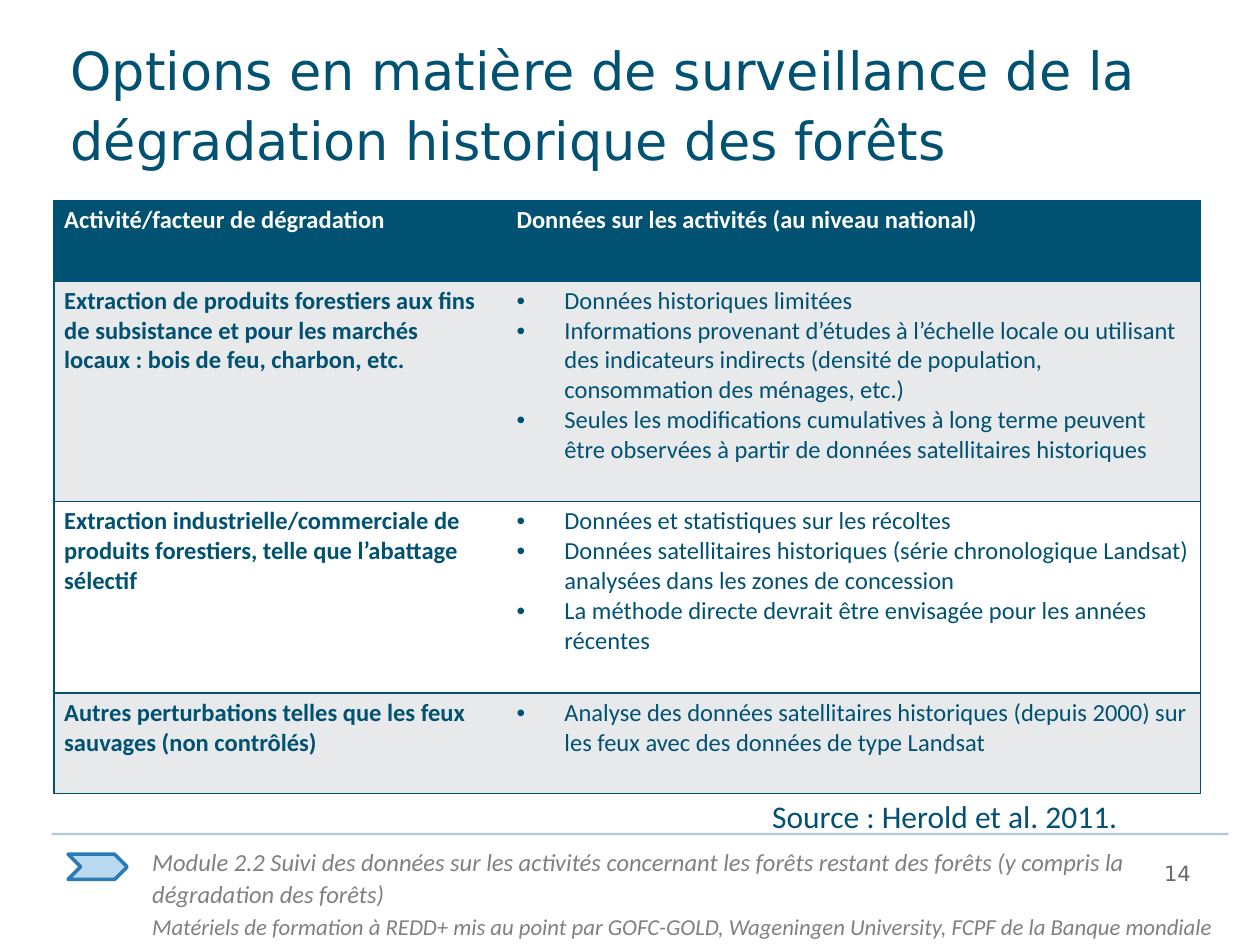
from dataclasses import dataclass

from lxml.etree import SubElement
from pptx import Presentation
from pptx.dml.color import RGBColor
from pptx.enum.shapes import MSO_CONNECTOR, MSO_SHAPE
from pptx.enum.text import MSO_ANCHOR, MSO_AUTO_SIZE, PP_ALIGN
from pptx.oxml import parse_xml
from pptx.oxml.ns import nsdecls, qn
from pptx.util import Inches, Pt

TEAL, GREY, WHITE, BAND = "005172", "808080", "FFFFFF", "E7E9EB"
BODY_FONT, TITLE_FONT = "Calibri", "DejaVu Sans"


@dataclass
class Line:
    text: str
    size: float
    color: str = TEAL
    font: str = BODY_FONT
    bold: bool = False
    italic: bool = False
    spacing: float | None = None
    bullet: bool = False


@dataclass
class Activity:
    name: str
    data: list[str]
    height: float


ACTIVITIES = [
    Activity(
        "Extraction de produits forestiers aux fins de subsistance et pour les marchés locaux : "
        "bois de feu, charbon, etc.",
        ["Données historiques limitées",
         "Informations provenant d’études à l’échelle locale ou utilisant des indicateurs indirects "
         "(densité de population, consommation des ménages, etc.)",
         "Seules les modifications cumulatives à long terme peuvent être observées à partir de "
         "données satellitaires historiques"],
        1.75),
    Activity(
        "Extraction industrielle/commerciale de produits forestiers, telle que l’abattage sélectif",
        ["Données et statistiques sur les récoltes",
         "Données satellitaires historiques (série chronologique Landsat) analysées dans les zones "
         "de concession",
         "La méthode directe devrait être envisagée pour les années récentes"],
        1.52),
    Activity(
        "Autres perturbations telles que les feux sauvages (non contrôlés)",
        ["Analyse des données satellitaires historiques (depuis 2000) sur les feux avec des données "
         "de type Landsat"],
        0.8),
]


def rgb(color: str) -> RGBColor:
    return RGBColor.from_string(color)


def write(text_frame, lines: list[Line]) -> None:
    for index, line in enumerate(lines):
        paragraph = text_frame.paragraphs[0] if index == 0 else text_frame.add_paragraph()
        paragraph.text = line.text
        paragraph.alignment = PP_ALIGN.LEFT
        if line.spacing:
            paragraph.line_spacing = Pt(line.spacing)
        if line.bullet:
            properties = paragraph._p.get_or_add_pPr()
            properties.set("marL", str(Inches(0.38)))
            properties.set("indent", str(-Inches(0.38)))
            SubElement(properties, qn("a:buFont"), typeface="Arial")
            SubElement(properties, qn("a:buChar"), char="•")
        font = paragraph.font
        font.name, font.size = line.font, Pt(line.size)
        font.bold, font.italic = line.bold, line.italic
        font.color.rgb = rgb(line.color)


def add_text(slide, left: float, top: float, width: float, height: float, lines: list[Line]) -> None:
    box = slide.shapes.add_textbox(Inches(left), Inches(top), Inches(width), Inches(height))
    box.text_frame.word_wrap = True
    write(box.text_frame, lines)


def set_borders(cell, outer_side: str) -> None:
    """Rule the top, bottom and outer side; leave the inner side open."""
    properties = cell._tc.get_or_add_tcPr()
    for index, side in enumerate("LRTB"):
        if side in outer_side + "TB":
            paint = f'<a:solidFill><a:srgbClr val="{TEAL}"/></a:solidFill>'
        else:
            paint = "<a:noFill/>"
        border = parse_xml(f'<a:ln{side} {nsdecls("a")} w="{Pt(1)}">{paint}</a:ln{side}>')
        properties.insert(index, border)


def fill_cell(cell, fill: str, outer_side: str, lines: list[Line]) -> None:
    cell.margin_left = cell.margin_right = Inches(0.08)
    cell.margin_top = cell.margin_bottom = Inches(0.04)
    cell.fill.solid()
    cell.fill.fore_color.rgb = rgb(fill)
    set_borders(cell, outer_side)
    write(cell.text_frame, lines)


def add_activity_table(slide) -> None:
    heights = [0.64] + [activity.height for activity in ACTIVITIES]
    table = slide.shapes.add_table(len(heights), 2, Inches(0.43), Inches(1.59),
                                   Inches(9.1), Inches(sum(heights))).table
    for column, width in zip(table.columns, (3.59, 5.51)):
        column.width = Inches(width)
    for row, height in zip(table.rows, heights):
        row.height = Inches(height)

    headings = ("Activité/facteur de dégradation", "Données sur les activités (au niveau national)")
    for column, (heading, side) in enumerate(zip(headings, "LR")):
        fill_cell(table.cell(0, column), TEAL, side, [Line(heading, 14, WHITE, bold=True)])
    for row, activity in enumerate(ACTIVITIES, start=1):
        fill = BAND if row % 2 else WHITE
        fill_cell(table.cell(row, 0), fill, "L", [Line(activity.name, 14, bold=True)])
        fill_cell(table.cell(row, 1), fill, "R",
                  [Line(text, 14, bullet=True) for text in activity.data])


def add_footer(slide) -> None:
    add_text(slide, 1.11, 6.66, 8.64, 0.86, [
        Line("Module 2.2 Suivi des données sur les activités concernant les forêts restant des "
             "forêts (y compris la dégradation des forêts)", 14, GREY, italic=True, spacing=18),
        Line("Matériels de formation à REDD+ mis au point par GOFC-GOLD, Wageningen University, "
             "FCPF de la Banque mondiale", 13, GREY, italic=True, spacing=18),
    ])
    chevron = slide.shapes.add_shape(MSO_SHAPE.CHEVRON, Inches(0.54), Inches(6.78),
                                     Inches(0.47), Inches(0.2))
    chevron.shadow.inherit = False
    chevron.fill.solid()
    chevron.fill.fore_color.rgb = rgb("B9D9EF")
    chevron.line.color.rgb = rgb("297AB5")
    chevron.line.width = Pt(2)
    add_text(slide, 9.14, 6.73, 0.61, 0.33, [Line("14", 12, "706762", TITLE_FONT, spacing=18)])

    # Translucent rule above the footer
    rule = slide.shapes.add_connector(MSO_CONNECTOR.STRAIGHT, Inches(0.41), Inches(6.62),
                                      Inches(9.75), Inches(6.62))
    rule.line.color.rgb = rgb(TEAL)
    rule.line.width = Pt(1.25)
    color = rule.line._ln.find(".//" + qn("a:srgbClr"))
    SubElement(color, qn("a:alpha"), val="30000")
    SubElement(rule._element.spPr, qn("a:effectLst"))


def format_title(title) -> None:
    title.left, title.top = Inches(0.54), Inches(0.25)
    title.width, title.height = Inches(9.23), Inches(1.2)
    frame = title.text_frame
    frame.margin_left, frame.margin_top = Inches(0.02), 0
    frame.margin_right, frame.margin_bottom = Inches(0.1), Inches(0.35)
    frame.word_wrap = True
    frame.auto_size = MSO_AUTO_SIZE.NONE
    frame.vertical_anchor = MSO_ANCHOR.TOP
    write(frame, [Line("Options en matière de surveillance de la dégradation historique des forêts",
                       30, font=TITLE_FONT, spacing=40)])


def main() -> None:
    presentation = Presentation()
    presentation.slide_width, presentation.slide_height = Inches(10), Inches(7.5)
    slide = presentation.slides.add_slide(presentation.slide_layouts[5])
    add_footer(slide)
    format_title(slide.shapes.title)
    add_activity_table(slide)
    add_text(slide, 6.03, 6.28, 3.12, 0.4, [Line("Source : Herold et al. 2011.", 18)])
    presentation.save("out.pptx")


if __name__ == "__main__":
    main()
